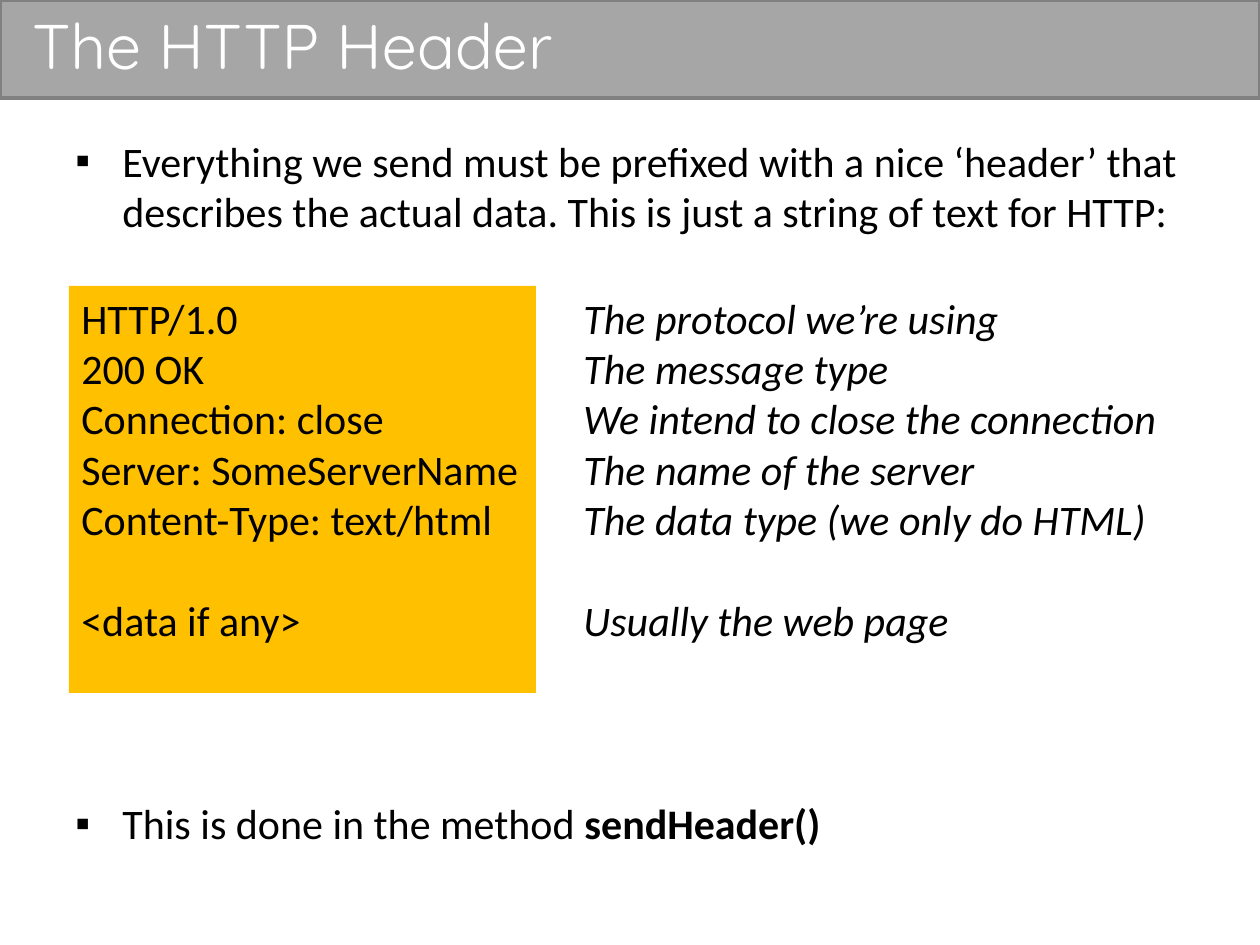
from lxml import etree
from pptx import Presentation
from pptx import util as u
from pptx.dml.color import RGBColor
from pptx.enum import shapes, text
from pptx.oxml.ns import qn

PX = 914400 / 126


def px(length):
    return u.Emu(round(length * PX))


def color(value):
    return RGBColor.from_string(value)


class Slide:
    body_font = "Calibri"
    title_font = "Quicksand"
    black, white, gray, edge, amber = "000000", "FFFFFF", "A6A6A6", "808080", "FFC000"
    size = 24
    line_gap = 29  # height of one text line in points

    def __init__(self, deck):
        self.page = deck.slides.add_slide(deck.slide_layouts[6])

    def rectangle(self, left, top, width, height, fill, line=None):
        box = self.page.shapes.add_shape(
            shapes.MSO_SHAPE.RECTANGLE, px(left), px(top), px(width), px(height))
        box.shadow.inherit = False
        box.fill.solid()
        box.fill.fore_color.rgb = color(fill)
        if line:
            box.line.color.rgb = color(line)
            box.line.width = u.Pt(2)
        else:
            box.line.fill.background()
        return box

    def text_box(self, left, top, width, height):
        return self.page.shapes.add_textbox(px(left), px(top), px(width), px(height))

    def style(self, para, italic=False):
        para.alignment = text.PP_ALIGN.LEFT
        para.font.name = self.body_font
        para.font.size = u.Pt(self.size)
        para.font.italic = italic
        para.font.color.rgb = color(self.black)

    def paragraphs(self, box, count):
        frame = box.text_frame
        frame.word_wrap = True
        frame.vertical_anchor = text.MSO_ANCHOR.TOP
        for _ in range(count - 1):
            frame.add_paragraph()
        return frame.paragraphs

    def title(self, words):
        self.rectangle(0, 0, 1260, 98, self.gray, self.edge)
        box = self.text_box(20, 0, 1201, 88)
        box.text_frame.vertical_anchor = text.MSO_ANCHOR.MIDDLE
        box.text_frame.word_wrap = True
        para = box.text_frame.paragraphs[0]
        para.text = words
        para.font.name = self.title_font
        para.font.size = u.Pt(36)
        para.font.color.rgb = color(self.white)

    def bullets(self, box, items):
        """Each item is (space before in points, [(words, bold), ...])."""
        for para, (space, spans) in zip(self.paragraphs(box, len(items)), items):
            self.style(para)
            para.space_before = u.Pt(space)
            for words, bold in spans:
                span = para.add_run()
                span.text = words
                span.font.bold = bold
            props = para._p.get_or_add_pPr()
            props.set("marL", str(px(47)))
            props.set("indent", str(-px(47)))
            bullet_font = etree.Element(qn("a:buFont"), typeface="Arial")
            bullet = etree.Element(qn("a:buChar"), char="▪")
            default = props.find(qn("a:defRPr"))
            default.addprevious(bullet_font)
            default.addprevious(bullet)

    def lines(self, box, words, italic=False):
        """Stack lines, with one line of space above the last."""
        paras = self.paragraphs(box, len(words))
        for para, line in zip(paras, words):
            para.text = line
            self.style(para, italic)
        paras[-1].space_before = u.Pt(self.line_gap)


def main():
    deck = Presentation()
    deck.slide_width, deck.slide_height = px(1260), px(945)
    slide = Slide(deck)

    # Title band
    slide.title("The HTTP Header")

    # Bullets above and below the header example
    slide.bullets(slide.text_box(63, 129, 1134, 758), [
        (0, [("Everything we send must be prefixed with a nice ‘header’ that "
              "describes the actual data. This is just a string of text for HTTP:", False)]),
        (321, [("This is done in the method ", False), ("sendHeader()", True)]),
    ])

    # Header lines beside their meanings
    rows = [
        ("HTTP/1.0", "The protocol we’re using"),
        ("200 OK", "The message type"),
        ("Connection: close", "We intend to close the connection"),
        ("Server: SomeServerName", "The name of the server"),
        ("Content-Type: text/html", "The data type (we only do HTML)"),
        ("<data if any>", "Usually the web page"),
    ]
    headers, meanings = zip(*rows)
    top, height = 286, 407
    slide.lines(slide.rectangle(69, top, 467, height, slide.amber), headers)
    slide.lines(slide.rectangle(571, top, 689, height, slide.white), meanings, italic=True)

    deck.save("out.pptx")


if __name__ == "__main__":
    main()
